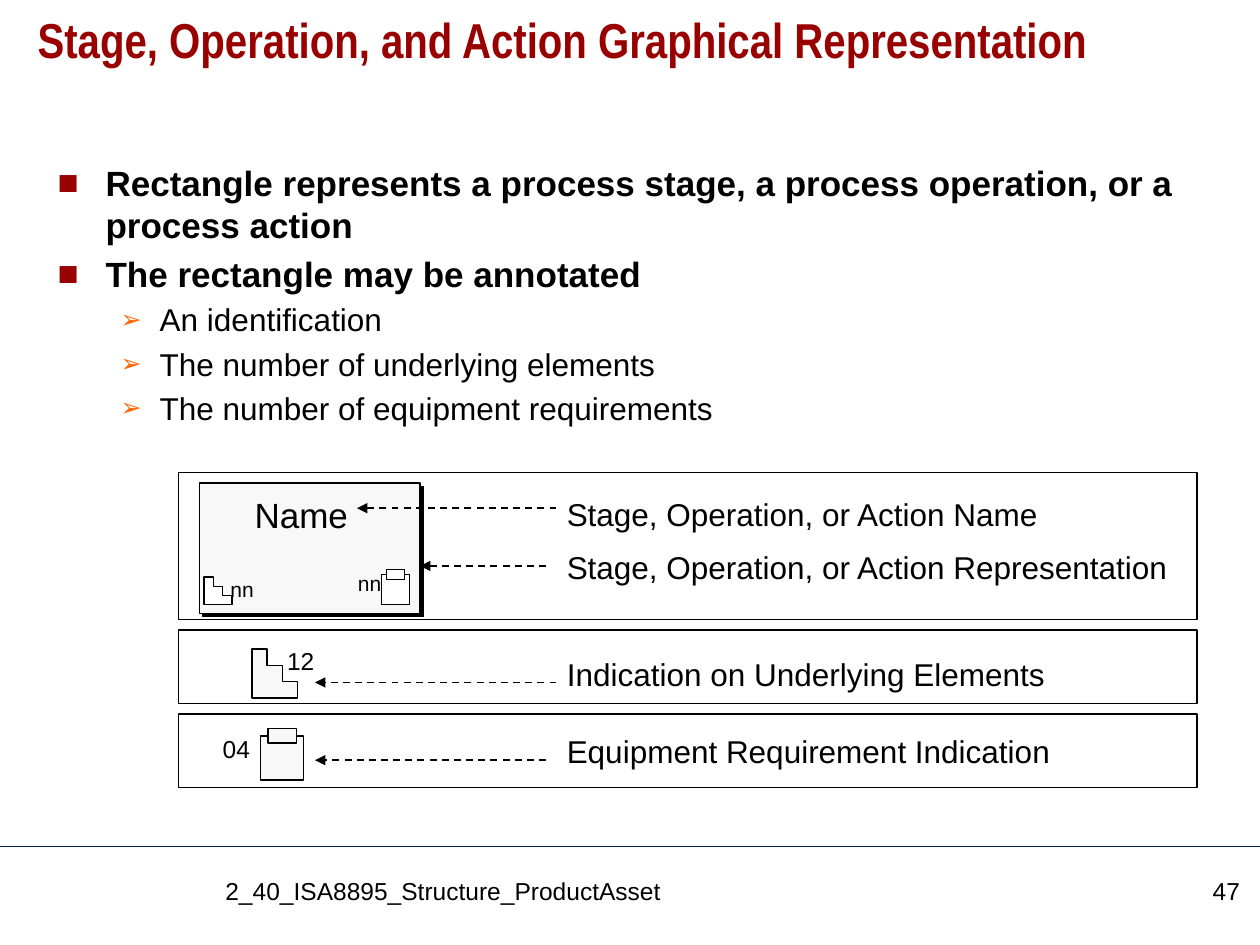
from lxml import etree
from pptx import Presentation, util as u
from pptx.dml.color import RGBColor
from pptx.enum import dml, shapes, text
from pptx.oxml import ns

COLS, ROWS = 120, 90
HUES = {"ink": "000000", "body": "010000", "title": "990000", "bullet": "FF6600",
        "rule": "002060", "paper": "FFFFFF", "pale": "F8F8F8"}
ALIGN = {"l": text.PP_ALIGN.LEFT, "c": text.PP_ALIGN.CENTER, "r": text.PP_ALIGN.RIGHT}
LEVELS = [
    {"mark": "■", "hue": "title", "scale": 100, "left": 0.38, "hang": 0.38, "size": 20, "bold": True},
    {"mark": "➢", "hue": "bullet", "scale": 80, "left": 0.81, "hang": 0.31, "size": 18, "bold": False},
]
POINTS = [
    (0, "Rectangle represents a process stage, a process operation, or a process action"),
    (0, "The rectangle may be annotated"),
    (1, "An identification"),
    (1, "The number of underlying elements"),
    (1, "The number of equipment requirements"),
]
PANELS = [(45, 14), (60, 7), (68, 7)]
LABELS = [
    (46.6, 48, "Stage, Operation, or Action Name"),
    (51.6, 60.5, "Stage, Operation, or Action Representation"),
    (61.8, 48.6, "Indication on Underlying Elements"),
    (69.12, 49, "Equipment Requirement Indication"),
]
ARROWS = [(53, 30, 65), (52, 30, 72.4), (52, 40, 53.9), (53, 34, 48.4)]
STEPS = [(0, 0), (1, 0), (1, 1), (2, 1), (2, 2), (3, 2), (3, 3), (0, 3)]
SHEET = [(0, 0), (3, 0), (3, 3), (0, 3)]


def add(node, tag, **attrs):
    return etree.SubElement(node, ns.qn(tag), {k: str(v) for k, v in attrs.items()})


class Page:
    def __init__(self, deck):
        self.wide, self.high = deck.slide_width, deck.slide_height
        self.slide = deck.slides.add_slide(deck.slide_layouts[6])
        self.items = self.slide.shapes

    def x(self, cols):
        return round(self.wide * cols / COLS)

    def y(self, rows):
        return round(self.high * rows / ROWS)

    def area(self, col, row, w, h):
        return self.x(col), self.y(row), self.x(w), self.y(h)

    def hue(self, name):
        return RGBColor.from_string(HUES[name])

    def font(self, para, hue="ink", **form):
        for key, val in {"name": "Arial", **form}.items():
            setattr(para.font, key, u.Pt(val) if key == "size" else val)
        para.font.color.rgb = self.hue(hue)

    def frame(self, area, wrap):
        box = self.items.add_textbox(*self.area(*area)).text_frame
        fit = text.MSO_AUTO_SIZE
        form = {"word_wrap": wrap, "auto_size": fit.NONE if wrap else fit.SHAPE_TO_FIT_TEXT}
        for key, val in form.items():
            setattr(box, key, val)
        return box

    def label(self, words, area, size, align="l", wrap=False, lead=None, **form):
        para = self.frame(area, wrap).paragraphs[0]
        para.text = words
        para.alignment = ALIGN[align]
        para.line_spacing = lead
        self.font(para, size=size, **form)

    def bullets(self, points, area):
        box = self.frame(area, True)
        for i, (level, words) in enumerate(points):
            style = LEVELS[level]
            para = box.add_paragraph() if i else box.paragraphs[0]
            para.text = words
            para.level = level
            para.space_before = u.Pt(style["size"] / 5 if i else 0)
            props = para._p.get_or_add_pPr()
            props.set("marL", str(u.Inches(style["left"])))
            props.set("indent", str(-u.Inches(style["hang"])))
            add(add(props, "a:buClr"), "a:srgbClr", val=HUES[style["hue"]])
            add(props, "a:buSzPct", val=style["scale"] * 1000)
            add(props, "a:buFont", typeface="Arial")
            add(props, "a:buChar", char=style["mark"])
            self.font(para, hue="body", size=style["size"], bold=style["bold"])

    def paint(self, item, fill, width):
        item.shadow.inherit = False
        item.fill.solid()
        item.fill.fore_color.rgb = self.hue(fill)
        item.line.color.rgb = self.hue("ink")
        item.line.width = u.Pt(width)
        return item

    def rect(self, area, fill="paper", width=0.75):
        item = self.items.add_shape(shapes.MSO_SHAPE.RECTANGLE, *self.area(*area))
        return self.paint(item, fill, width)

    def card(self, area):
        item = self.rect(area, "pale")
        glow = add(item._element.spPr.find(ns.qn("a:effectLst")), "a:outerShdw",
                   blurRad=0, dist=u.Pt(2.8), dir=45 * 60000, algn="ctr", rotWithShape=0)
        add(glow, "a:srgbClr", val=HUES["body"])

    def outline(self, thirds, area, fill):
        col, row, w, h = area
        spots = [(self.x(col + w * a / 3), self.y(row + h * b / 3)) for a, b in thirds]
        pen = self.items.build_freeform(*spots[0])
        pen.add_line_segments(spots[1:], close=True)
        self.paint(pen.convert_to_shape(), fill, 0.75)

    def clip(self, area, fill):
        col, row, w, h = area
        self.outline(SHEET, area, fill)
        self.rect((col + w / 6, row - h / 6, w * 2 / 3, h / 3), fill)

    def line(self, start, end, row, hue="ink", width=1, arrow=True):
        item = self.items.add_connector(shapes.MSO_CONNECTOR.STRAIGHT, self.x(start),
                                        self.y(row), self.x(end), self.y(row))
        item.line.color.rgb = self.hue(hue)
        item.line.width = u.Pt(width)
        if arrow:
            item.line.dash_style = dml.MSO_LINE.DASH
            add(item.line._get_or_add_ln(), "a:tailEnd", type="triangle")
        add(item._element.spPr, "a:effectLst")


def main():
    deck = Presentation()
    deck.slide_width, deck.slide_height = u.Inches(10), u.Inches(7.5)
    page = Page(deck)
    page.line(0, COLS, 80.64, "rule", 0.75, False)
    page.label("Stage, Operation, and Action Graphical Representation", (2.4, 0.96, 115.32, 9.96),
               28, wrap=True, lead=0.9, hue="title", name="Arial Narrow", bold=True)
    page.bullets(POINTS, (4.32, 14.76, 112.08, 33.24))
    page.label("2_40_ISA8895_Structure_ProductAsset", (20.28, 82.8, 86.52, 5.4), 14, wrap=True)
    page.label("47", (108.24, 82.8, 11.04, 5.4), 14, "r", True)

    for row, high in PANELS:
        page.rect((17, row, 97, high), width=1)
    for row, wide, words in LABELS:
        page.label(words, (52.8, row, wide, 4.8), 18)

    page.card((19, 46, 21, 12.4))
    page.outline(STEPS, (19.44, 54.96, 2.64, 2.64), "paper")
    page.label("nn", (20.76, 54.36, 4.9, 3.6), 12)
    page.clip((36.36, 54.72, 2.64, 2.88), "paper")
    page.label("nn", (32.6, 53.76, 4.9, 3.6), 12, "r")
    page.label("Name", (22.95, 46.44, 11.5, 5.16), 20, "c")

    page.outline(STEPS, (24, 61.8, 4.32, 4.68), "pale")
    page.label("12", (26.16, 60.96, 5.3, 3.96), 14)
    page.clip((24.84, 70.08, 4.08, 4.2), "pale")
    page.label("04", (19.7, 69.36, 5.3, 3.96), 14, "r")

    for start, end, row in ARROWS:
        page.line(start, end, row)
    deck.save("out.pptx")


if __name__ == "__main__":
    main()
